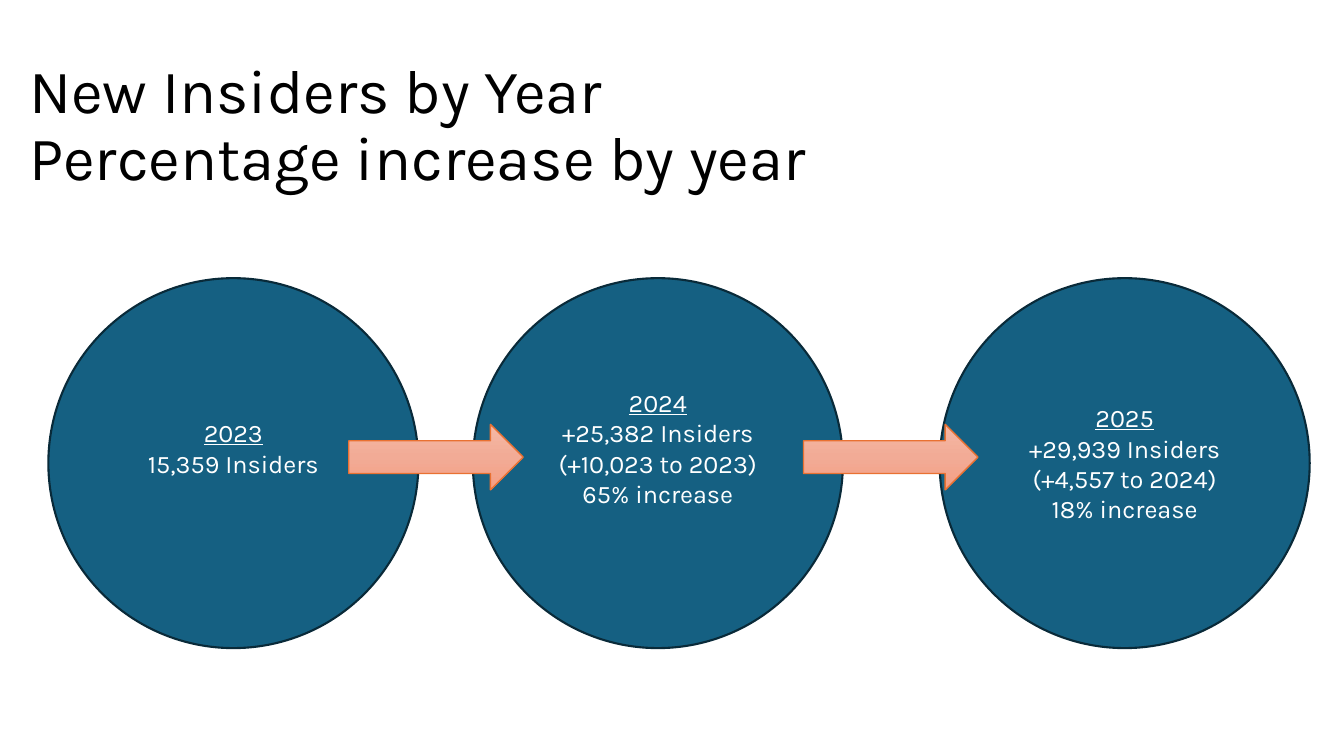
"""Build a slide showing new insiders per year as circles joined by arrows."""
from copy import deepcopy

from pptx import Presentation
from pptx.dml.color import RGBColor
from pptx.enum.shapes import MSO_SHAPE as SHAPE
from pptx.enum.text import MSO_ANCHOR as ANCHOR, PP_ALIGN as ALIGN
from pptx.util import Inches, Pt

BLACK = RGBColor(0x00, 0x00, 0x00)
WHITE = RGBColor(0xFF, 0xFF, 0xFF)
BLUE = RGBColor(0x15, 0x60, 0x82)
NAVY = RGBColor(0x09, 0x2A, 0x39)
ORANGE = RGBColor(0xE9, 0x71, 0x32)
PEACHES = [RGBColor(0xF5, 0xB8, 0xA5), RGBColor(0xF2, 0xAB, 0x96), RGBColor(0xF5, 0x9E, 0x82)]

TITLE = ["New Insiders by Year", "Percentage increase by year"]
DIAMETER, CIRCLE_TOP = 3.67, 2.76
ARROW_W, ARROW_H, ARROW_TOP = 1.73, 0.65, 4.21
INSET, LINE = 0.05, 0.3
YEARS = [
    (0.48, LINE, ["2023", "15,359 Insiders"]),
    (4.69, LINE, ["2024", "+25,382 Insiders", "(+10,023 to 2023)", "65% increase"]),
    (9.32, 0, ["2025", "+29,939 Insiders", "(+4,557 to 2024)", "18% increase"]),
]


def write(tf, lines, size, color, align, spacing=1.0):
    """Fill a text frame with one paragraph per line."""
    tf.word_wrap = True
    for i, line in enumerate(lines):
        p = tf.paragraphs[0] if i == 0 else tf.add_paragraph()
        p.alignment, p.line_spacing = align, spacing
        r = p.add_run()
        r.text = line
        for name, value in {"name": "Karla", "size": Pt(size)}.items():
            setattr(r.font, name, value)
        r.font.color.rgb = color


def add_outlined(kind, left, top, width, height, color, weight):
    """Add a preset shape with an outline and no shadow."""
    sp = s.shapes.add_shape(kind, Inches(left), Inches(top), Inches(width), Inches(height))
    sp.shadow.inherit = False
    sp.line.color.rgb = color
    sp.line.width = Pt(weight)
    return sp


prs = Presentation()
prs.slide_width, prs.slide_height = Inches(13.33), Inches(7.5)
s = prs.slides.add_slide(prs.slide_layouts[5])

title = s.shapes.title
for name, value in {"left": 0.19, "top": 0.55, "width": 10, "height": 1.45}.items():
    setattr(title, name, Inches(value))
title.text_frame.vertical_anchor = ANCHOR.TOP
write(title.text_frame, TITLE, 44, BLACK, ALIGN.LEFT, 0.9)

for left, lift, lines in YEARS:
    circle = add_outlined(SHAPE.OVAL, left, CIRCLE_TOP, DIAMETER, DIAMETER, NAVY, 1.5)
    circle.fill.solid()
    circle.fill.fore_color.rgb = BLUE
    tf = circle.text_frame
    tf.vertical_anchor = ANCHOR.MIDDLE
    tf.margin_bottom = Inches(INSET + lift)
    write(tf, lines, 18, WHITE, ALIGN.CENTER)
    tf.paragraphs[0].runs[0].font.underline = True

for left in (3.46, 7.97):
    arrow = add_outlined(SHAPE.RIGHT_ARROW, left, ARROW_TOP, ARROW_W, ARROW_H, ORANGE, 1)
    arrow.fill.gradient()
    arrow.fill.gradient_angle = 270
    first = arrow._element.spPr.xpath(".//a:gs")[0]
    first.addnext(deepcopy(first))
    for i, (stop, peach) in enumerate(zip(arrow.fill.gradient_stops, PEACHES)):
        stop.position = i / 2
        stop.color.rgb = peach

prs.save("out.pptx")
